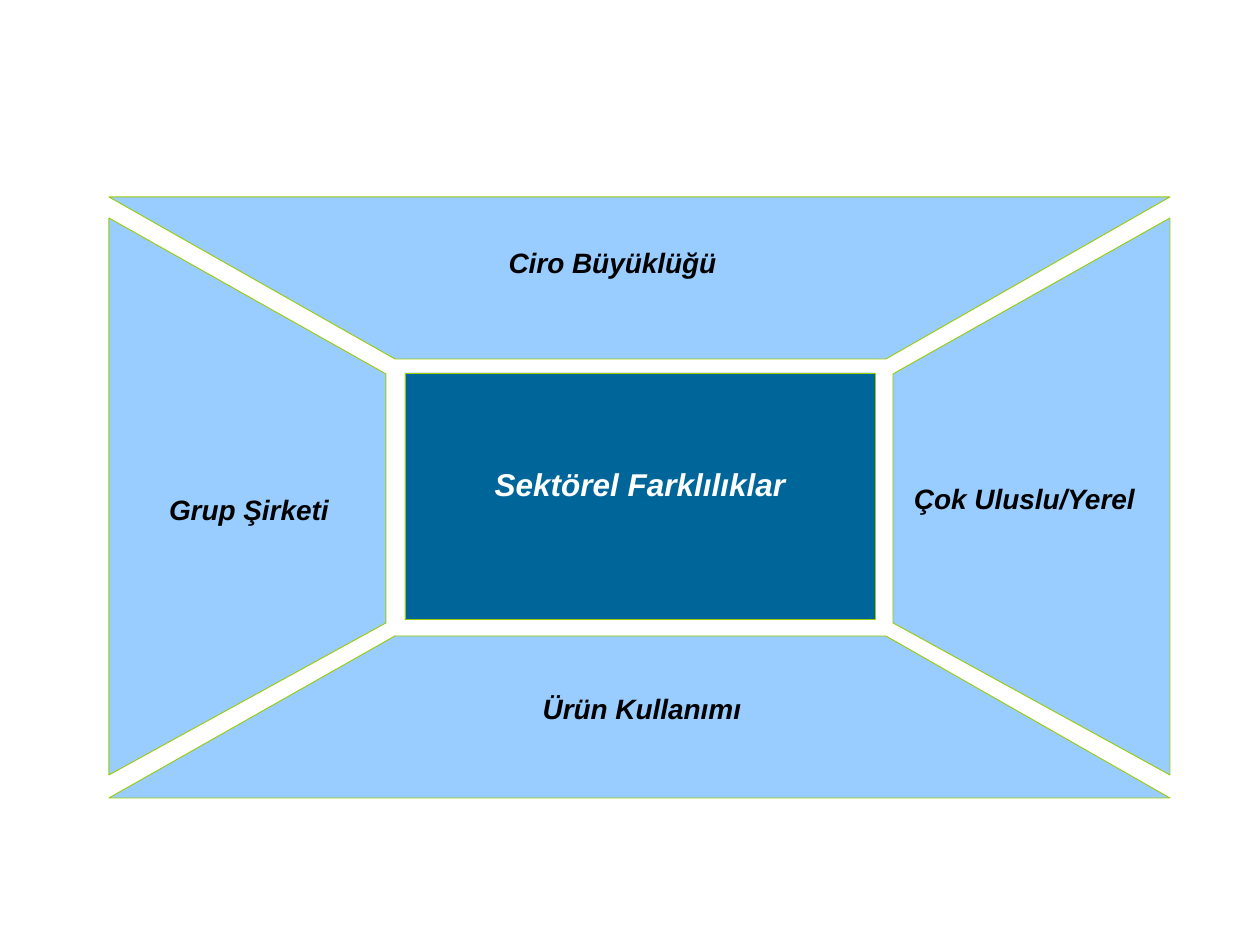
from dataclasses import dataclass

import pptx
import pptx.dml.color
import pptx.enum.shapes
import pptx.enum.text
import pptx.util

EMU_PER_PX = 914400 / 126
COLORS = {"panel": "99CCFF", "core": "006699", "edge": "99CC00",
          "label": "000000", "core_label": "FFFFFF"}
LEFT, RIGHT = 109, 1170
TOP, BOTTOM = 197, 798
SIDE_TOP, SIDE_BOTTOM = 218, 775
INSET = 6


@dataclass
class Panel:
    points: list[tuple[int, int]]


@dataclass
class Label:
    text: str
    left: int
    top: int
    width: int
    height: int
    lift: int


PANELS = [
    Panel([(LEFT, TOP), (RIGHT, TOP), (886, 359), (395, 359)]),
    Panel([(LEFT, BOTTOM), (RIGHT, BOTTOM), (886, 636), (395, 636)]),
    Panel([(LEFT, SIDE_TOP), (386, 374), (386, 623), (LEFT, SIDE_BOTTOM)]),
    Panel([(RIGHT, SIDE_TOP), (893, 374), (893, 623), (RIGHT, SIDE_BOTTOM)]),
]
CORE = Label("Sektörel Farklılıklar", 405, 373, 470, 247, 13)
LABELS = [
    Label("Çok Uluslu/Yerel", 887, 467, 275, 89, 13),
    Label("Grup Şirketi", 103, 420, 292, 210, 16),
    Label("Ürün Kullanımı", 310, 662, 664, 87, -3),
    Label("Ciro Büyüklüğü", 338, 238, 549, 77, 14),
]


def px(length: int) -> pptx.util.Emu:
    return pptx.util.Emu(round(length * EMU_PER_PX))


def rgb(name: str) -> pptx.dml.color.RGBColor:
    return pptx.dml.color.RGBColor.from_string(COLORS[name])


def frame(label: Label) -> list[pptx.util.Emu]:
    return [px(n) for n in (label.left, label.top, label.width, label.height)]


def paint(shape, fill: str) -> None:
    shape.shadow.inherit = False
    shape.fill.solid()
    shape.fill.fore_color.rgb = rgb(fill)
    shape.line.color.rgb = rgb("edge")
    shape.line.width = pptx.util.Pt(0.5)


def draw_panel(slide, panel: Panel) -> None:
    start, *rest = panel.points
    builder = slide.shapes.build_freeform(*start, scale=EMU_PER_PX)
    builder.add_line_segments(rest, close=True)
    paint(builder.convert_to_shape(), "panel")


def write(shape, label: Label, size: int, color: str) -> None:
    frame_format = {
        "word_wrap": True,
        "vertical_anchor": pptx.enum.text.MSO_ANCHOR.MIDDLE,
        "margin_left": px(INSET),
        "margin_right": px(INSET),
        "margin_top": px(INSET + max(0, -2 * label.lift)),
        "margin_bottom": px(INSET + max(0, 2 * label.lift)),
    }
    for attribute, value in frame_format.items():
        setattr(shape.text_frame, attribute, value)
    paragraph = shape.text_frame.paragraphs[0]
    paragraph.alignment = pptx.enum.text.PP_ALIGN.CENTER
    run = paragraph.add_run()
    run.text = label.text
    font_format = {"name": "Arial", "size": pptx.util.Pt(size),
                   "bold": True, "italic": True}
    for attribute, value in font_format.items():
        setattr(run.font, attribute, value)
    run.font.color.rgb = rgb(color)


def main() -> None:
    presentation = pptx.Presentation()
    presentation.slide_width = px(1260)
    presentation.slide_height = px(945)
    slide = presentation.slides.add_slide(presentation.slide_layouts[6])

    for panel in PANELS:
        draw_panel(slide, panel)

    core = slide.shapes.add_shape(
        pptx.enum.shapes.MSO_SHAPE.RECTANGLE, *frame(CORE))
    paint(core, "core")
    write(core, CORE, 18, "core_label")

    for label in LABELS:
        write(slide.shapes.add_textbox(*frame(label)), label, 16, "label")

    presentation.save("out.pptx")


if __name__ == "__main__":
    main()
